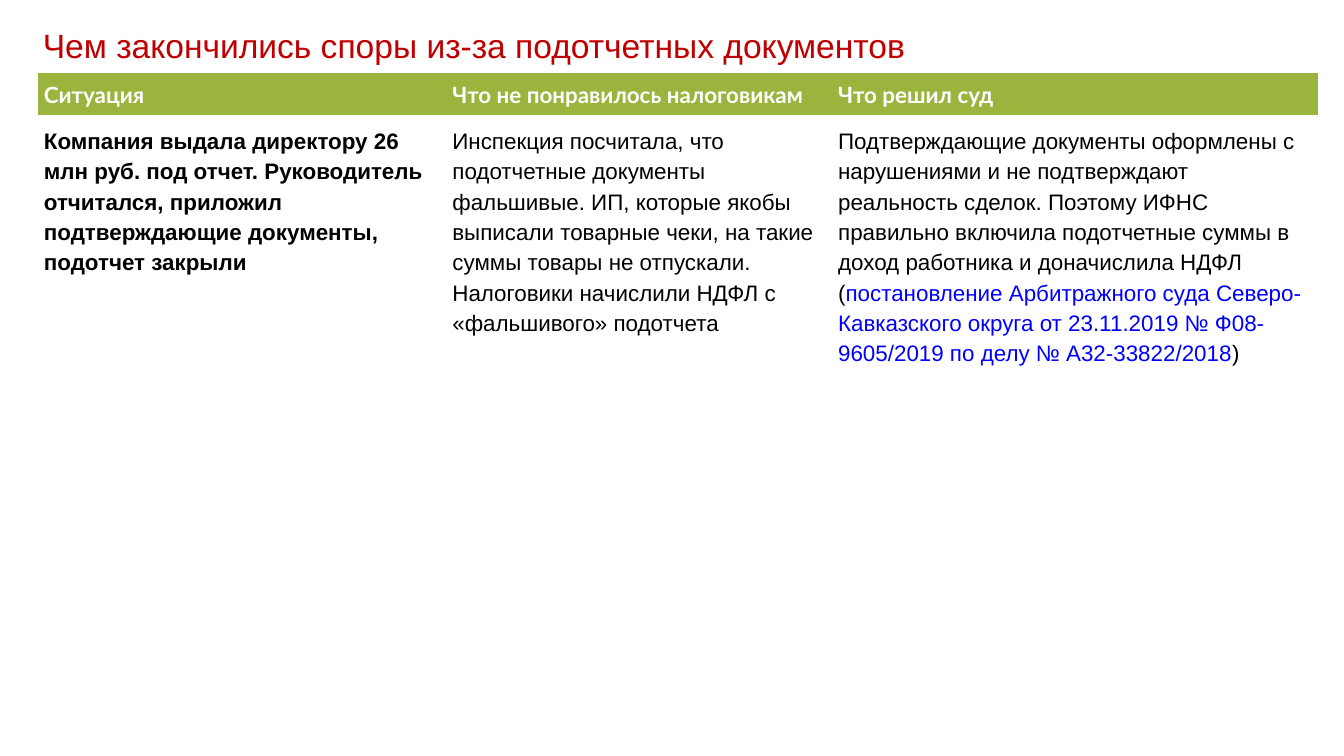
from pptx import Presentation
from pptx.dml.color import RGBColor
from pptx.enum.text import MSO_ANCHOR as ANCHOR
from pptx.util import Cm, Pt


def color(value):
    return RGBColor.from_string(value)


def add_text(p, text, size=12, font="Arial", fill="000000", bold=False):
    r = p.add_run()
    r.text = text
    r.font.size = Pt(size)
    r.font.name = font
    r.font.bold = bold
    r.font.color.rgb = color(fill)


prs = Presentation()
prs.slide_width = Cm(25.4)
prs.slide_height = Cm(14.28)
s = prs.slides.add_slide(prs.slide_layouts[6])

sp = s.shapes.add_textbox(Cm(0.56), Cm(0.53), Cm(24.84), Cm(0.82))
tf = sp.text_frame
tf.word_wrap = True
tf.vertical_anchor = ANCHOR.BOTTOM
add_text(tf.paragraphs[0], "Чем закончились споры из-за подотчетных документов",
         size=18, fill="C00000")

headers = ["Ситуация", "Что не понравилось налоговикам", "Что решил суд"]
situation = ("Компания выдала директору 26 млн руб. под отчет. Руководитель отчитался, "
             "приложил подтверждающие документы, подотчет закрыли")
claim = ("Инспекция посчитала, что подотчетные документы фальшивые. ИП, которые якобы "
         "выписали товарные чеки, на такие суммы товары не отпускали. "
         "Налоговики начислили НДФЛ с «фальшивого» подотчета")
decision = ("Подтверждающие документы оформлены с нарушениями и не подтверждают "
            "реальность сделок. Поэтому ИФНС правильно включила подотчетные суммы "
            "в доход работника и доначислила НДФЛ (")
ruling = ("постановление Арбитражного суда Северо-Кавказского округа "
          "от 23.11.2019 № Ф08-9605/2019 по делу № А32-33822/2018")

rows = [
    [[(h, dict(font="Lato", fill="FFFFFF", bold=True))] for h in headers],
    [[(situation, dict(bold=True))],
     [(claim, {})],
     [(decision, {}), (ruling, dict(fill="0000FF")), (")", {})]],
]
widths = [7.72, 7.29, 9.19]
heights = [0.76, 4.67]

sp = s.shapes.add_table(2, 3, Cm(0.71), Cm(1.37), Cm(sum(widths)), Cm(sum(heights)))
table = sp.table
table.horz_banding = False
table._tbl.tblPr.find("{*}tableStyleId").text = "{2D5ABB26-0587-4C30-8999-92F81FD0307C}"
for col, width in zip(table.columns, widths):
    col.width = Cm(width)

for i, (row, height) in enumerate(zip(rows, heights)):
    table.rows[i].height = Cm(height)
    for j, runs in enumerate(row):
        cell = table.cell(i, j)
        cell.margin_left = cell.margin_right = Cm(0.12)
        if i == 0:
            cell.margin_top, cell.margin_bottom = Cm(0.1), Cm(0.12)
            cell.vertical_anchor = ANCHOR.MIDDLE
            cell.fill.solid()
            cell.fill.fore_color.rgb = color("9BB43E")
        else:
            cell.margin_top, cell.margin_bottom = Cm(0.18), Cm(0.02)
            cell.fill.background()
        p = cell.text_frame.paragraphs[0]
        p.line_spacing = Pt(16.2)
        for text, style in runs:
            add_text(p, text, **style)

prs.save("out.pptx")
